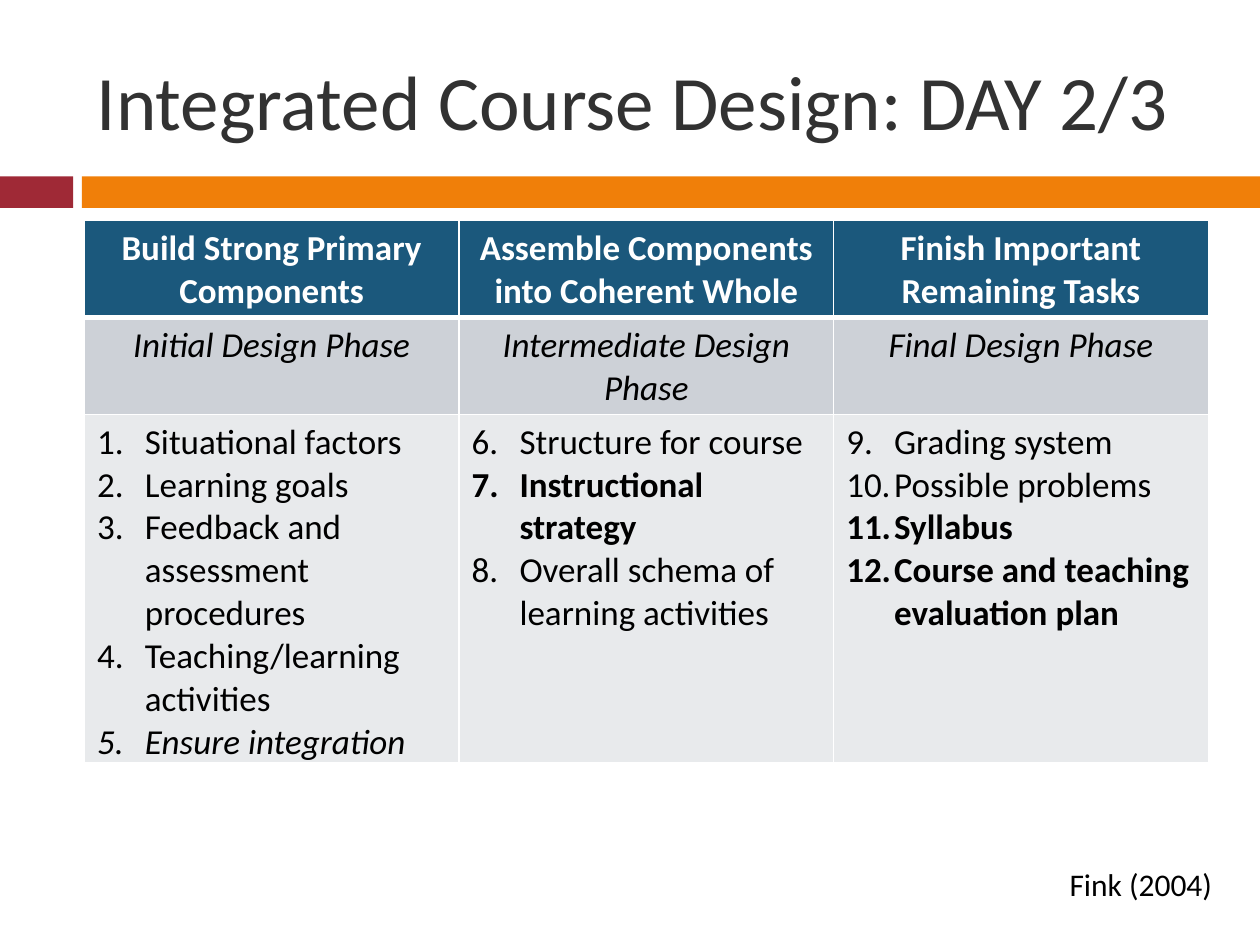
import pptx
import pptx.util
import pptx.dml.color
import pptx.enum.shapes
import pptx.enum.text
import pptx.oxml.ns
import lxml.etree

Inches = pptx.util.Inches
RGBColor = pptx.dml.color.RGBColor
Align = pptx.enum.text.PP_ALIGN
Anchor = pptx.enum.text.MSO_ANCHOR
qn = pptx.oxml.ns.qn

RED = RGBColor(0x9F, 0x29, 0x36)
ORANGE = RGBColor(0xF0, 0x7F, 0x09)
BLUE = RGBColor(0x1B, 0x58, 0x7C)
GREY = RGBColor(0xCD, 0xD1, 0xD7)
PALE = RGBColor(0xE8, 0xEA, 0xEC)
CHARCOAL = RGBColor(0x32, 0x32, 0x32)
BLACK = RGBColor(0, 0, 0)
WHITE = RGBColor(255, 255, 255)

TITLE = "Integrated Course Design: DAY 2/3"
SOURCE = "Fink (2004)"
BARS = [(0, 0.58, RED), (0.65, 9.35, ORANGE)]
BOLD = {"bold": True}
ITALIC = {"italic": True}
PHASES = [
    ("Build Strong Primary Components", "Initial Design Phase", [
        ("Situational factors", {}),
        ("Learning goals", {}),
        ("Feedback and assessment procedures", {}),
        ("Teaching/learning activities", {}),
        ("Ensure integration", ITALIC),
    ]),
    ("Assemble Components into Coherent Whole", "Intermediate Design Phase", [
        ("Structure for course", {}),
        ("Instructional strategy", BOLD),
        ("Overall schema of learning activities", {}),
    ]),
    ("Finish Important Remaining Tasks", "Final Design Phase", [
        ("Grading system", {}),
        ("Possible problems", {}),
        ("Syllabus", BOLD),
        ("Course and teaching evaluation plan", BOLD),
    ]),
]
LEFT, WIDTH = 0.67, 8.92
TABLE_TOP = 1.75
ROW_HEIGHTS = [0.77, 0.77, 2.76]
ROW_FILLS = [BLUE, GREY, PALE]
INDENT = 0.38


def write(para, text, size=20, color=BLACK, bold=False, italic=False, align=Align.LEFT):
    para.alignment = align
    span = para.add_run()
    span.text = text
    font = span.font
    font.name = "Calibri"
    font.size = pptx.util.Pt(size)
    font.color.rgb = color
    font.bold = bold
    font.italic = italic


def number(para, start):
    properties = para._p.get_or_add_pPr()
    properties.set("marL", str(Inches(INDENT)))
    properties.set("indent", str(-Inches(INDENT)))
    bullet = lxml.etree.SubElement(properties, qn("a:buAutoNum"), type="arabicPeriod")
    bullet.set("startAt", str(start))


def style_cell(cell, fill, bottom_width):
    properties = cell._tc.get_or_add_tcPr()
    for side, width in (("L", 1), ("R", 1), ("T", 1), ("B", bottom_width)):
        border = lxml.etree.SubElement(
            properties, qn("a:ln" + side), w=str(pptx.util.Pt(width)))
        solid = lxml.etree.SubElement(border, qn("a:solidFill"))
        lxml.etree.SubElement(solid, qn("a:srgbClr"), val=str(WHITE))
    cell.fill.solid()
    cell.fill.fore_color.rgb = fill


def add_bars(page):
    for left, width, color in BARS:
        bar = page.shapes.add_shape(
            pptx.enum.shapes.MSO_SHAPE.RECTANGLE,
            Inches(left), Inches(1.4), Inches(width), Inches(0.25))
        bar.shadow.inherit = False
        bar.fill.solid()
        bar.fill.fore_color.rgb = color
        bar.line.fill.background()


def add_text(page, text, left, top, width, height, wrap=True, anchor=Anchor.TOP, **style):
    box = page.shapes.add_textbox(Inches(left), Inches(top), Inches(width), Inches(height))
    frame = box.text_frame
    frame.word_wrap = wrap
    frame.vertical_anchor = anchor
    write(frame.paragraphs[0], text, **style)
    return box


def add_phases(page):
    table = page.shapes.add_table(
        len(ROW_HEIGHTS), len(PHASES), Inches(LEFT), Inches(TABLE_TOP),
        Inches(WIDTH), Inches(sum(ROW_HEIGHTS))).table
    for row, height in zip(table.rows, ROW_HEIGHTS):
        row.height = Inches(height)
    start = 1
    for column, (heading, phase, steps) in enumerate(PHASES):
        cells = [table.cell(row, column) for row in range(len(ROW_HEIGHTS))]
        for row, cell in enumerate(cells):
            style_cell(cell, ROW_FILLS[row], 3 if row == 0 else 1)
        write(cells[0].text_frame.paragraphs[0], heading,
              color=WHITE, bold=True, align=Align.CENTER)
        write(cells[1].text_frame.paragraphs[0], phase, italic=True, align=Align.CENTER)
        frame = cells[2].text_frame
        for index, (step, style) in enumerate(steps):
            para = frame.add_paragraph() if index else frame.paragraphs[0]
            write(para, step, **style)
            number(para, start)
        start += len(steps)


def main():
    deck = pptx.Presentation()
    deck.slide_width, deck.slide_height = Inches(10), Inches(7.5)
    page = deck.slides.add_slide(deck.slide_layouts[6])
    add_bars(page)
    add_text(page, TITLE, LEFT, 0.25, WIDTH, 1.08,
             anchor=Anchor.MIDDLE, size=44, color=CHARCOAL)
    add_phases(page)
    source = add_text(page, SOURCE, 8.39, 6.82, 1.35, 0.4, wrap=False, size=18)
    source.text_frame.auto_size = pptx.enum.text.MSO_AUTO_SIZE.SHAPE_TO_FIT_TEXT
    deck.save("out.pptx")


if __name__ == "__main__":
    main()
